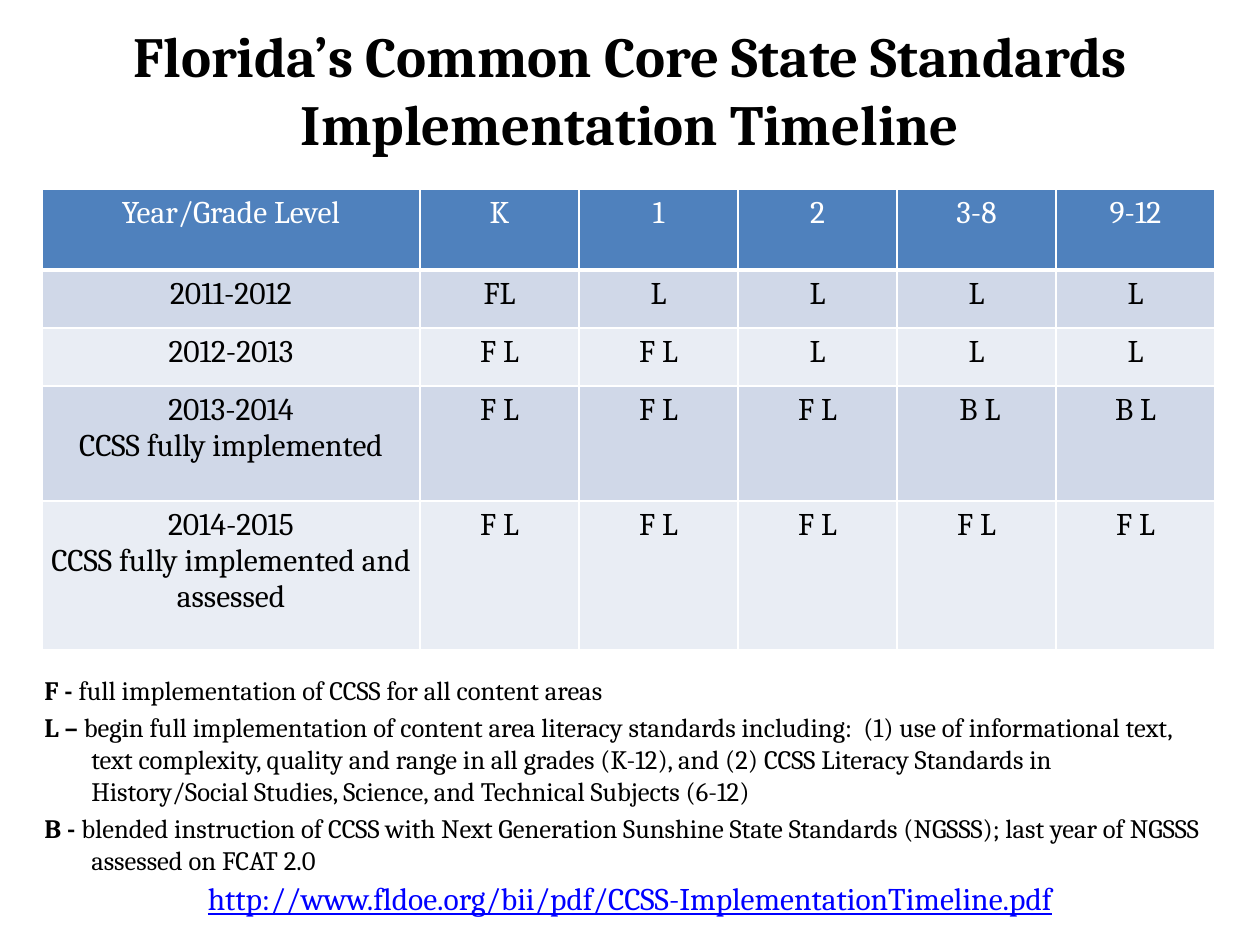
from lxml.etree import SubElement
from pptx import Presentation
from pptx.dml.color import RGBColor
from pptx.enum.text import MSO_ANCHOR, MSO_AUTO_SIZE, PP_ALIGN
from pptx.oxml.ns import qn
from pptx.util import Emu, Pt

TITLE = "Florida’s Common Core State Standards Implementation Timeline"
TIMELINE = [
    ("Year/Grade Level", "K", "1", "2", "3-8", "9-12"),
    ("2011-2012", "FL", "L", "L", "L", "L"),
    ("2012-2013", "F L", "F L", "L", "L", "L"),
    ("2013-2014\nCCSS fully implemented", "F L", "F L", "F L", " B L", "B L"),
    ("2014-2015\nCCSS fully implemented and assessed", "F L", "F L", "F L", "F L", "F L"),
]
LEGEND = [
    ("F -", " full implementation of CCSS for all content areas"),
    ("L – ", "begin full implementation of content area literacy standards including:  "
             "(1) use of informational text, text complexity, quality and range in all grades "
             "(K-12), and (2) CCSS Literacy Standards in History/Social Studies, Science, and "
             "Technical Subjects (6-12)"),
    ("B - ", "blended instruction of CCSS with Next Generation Sunshine State Standards "
             "(NGSSS); last year of NGSSS assessed on FCAT 2.0"),
]
ADDRESS = "http://www.fldoe.org/bii/pdf/CCSS-ImplementationTimeline.pdf"

FONT = "Cambria"
BLACK = RGBColor(0x00, 0x00, 0x00)
WHITE = RGBColor(0xFF, 0xFF, 0xFF)
HEADER_BLUE = RGBColor(0x4F, 0x81, 0xBD)
BANDS = (RGBColor(0xE9, 0xED, 0xF4), RGBColor(0xD0, 0xD8, 0xE8))
LINK_BLUE = RGBColor(0x00, 0x00, 0xFF)

# Lengths in px
SLIDE_W, SLIDE_H = 1260, 945
COLUMNS = [378] + [159] * 5
ROWS = [81, 58, 58, 115, 149]
CELL_MARGIN = 6
HANGING = 47


def px(n):
    return Emu(round(n * 914400 / 126))


def add_run(paragraph, text, size, color=BLACK, bold=False):
    run = paragraph.add_run()
    run.text = text
    font = run.font
    font.name, font.size, font.bold = FONT, Pt(size), bold
    font.color.rgb = color
    return run


def add_paragraphs(frame, count):
    return [frame.paragraphs[0]] + [frame.add_paragraph() for _ in range(count - 1)]


def add_borders(cell, bottom):
    properties = cell._tc.get_or_add_tcPr()
    sides = (("a:lnL", 1), ("a:lnR", 1), ("a:lnT", 1), ("a:lnB", bottom))
    for position, (side, width) in enumerate(sides):
        line = SubElement(properties, qn(side), w=str(Pt(width)))
        fill = SubElement(line, qn("a:solidFill"))
        SubElement(fill, qn("a:srgbClr"), val=str(WHITE))
        properties.insert(position, line)


def add_text_box(slide, *box):
    frame = slide.shapes.add_textbox(*map(px, box)).text_frame
    frame.word_wrap = True
    return frame


presentation = Presentation()
presentation.slide_width, presentation.slide_height = px(SLIDE_W), px(SLIDE_H)
slide = presentation.slides.add_slide(presentation.slide_layouts[5])

# Title
title = slide.shapes.title
title.left, title.top, title.width, title.height = map(px, (0, 21, SLIDE_W, 136))
heading = title.text_frame
heading.auto_size = MSO_AUTO_SIZE.NONE
heading.vertical_anchor = MSO_ANCHOR.MIDDLE
heading.paragraphs[0].alignment = PP_ALIGN.CENTER
add_run(heading.paragraphs[0], TITLE, 32.4, bold=True)

# Timeline table
timeline = slide.shapes.add_table(
    len(ROWS), len(COLUMNS), px(42), px(189), px(sum(COLUMNS)), px(sum(ROWS))).table
timeline.first_row = timeline.horz_banding = False
for column, width in zip(timeline.columns, COLUMNS):
    column.width = px(width)
for r, (row, height, entries) in enumerate(zip(timeline.rows, ROWS, TIMELINE)):
    row.height = px(height)
    header = r == 0
    for cell, entry in zip(row.cells, entries):
        cell.margin_left = cell.margin_right = px(CELL_MARGIN)
        cell.margin_top = cell.margin_bottom = px(CELL_MARGIN)
        cell.fill.solid()
        cell.fill.fore_color.rgb = HEADER_BLUE if header else BANDS[r % 2]
        add_borders(cell, bottom=3 if header else 1)
        lines = entry.split("\n")
        for paragraph, line in zip(add_paragraphs(cell.text_frame, len(lines)), lines):
            paragraph.alignment = PP_ALIGN.CENTER
            add_run(paragraph, line, 18, WHITE if header else BLACK)

# Legend of the codes
legend = add_text_box(slide, 32, 668, 1187, 220)
for paragraph, (code, meaning) in zip(add_paragraphs(legend, len(LEGEND)), LEGEND):
    paragraph.space_before = Pt(3)
    indent = paragraph._p.get_or_add_pPr()
    indent.set("marL", str(px(HANGING)))
    indent.set("indent", str(px(-HANGING)))
    add_run(paragraph, code, 15.2, bold=True)
    add_run(paragraph, meaning, 15.2)

# Web address
address = add_text_box(slide, 0, 873, SLIDE_W, 51)
address.auto_size = MSO_AUTO_SIZE.SHAPE_TO_FIT_TEXT
address.paragraphs[0].alignment = PP_ALIGN.CENTER
add_run(address.paragraphs[0], ADDRESS, 18, LINK_BLUE).font.underline = True

presentation.save("out.pptx")
